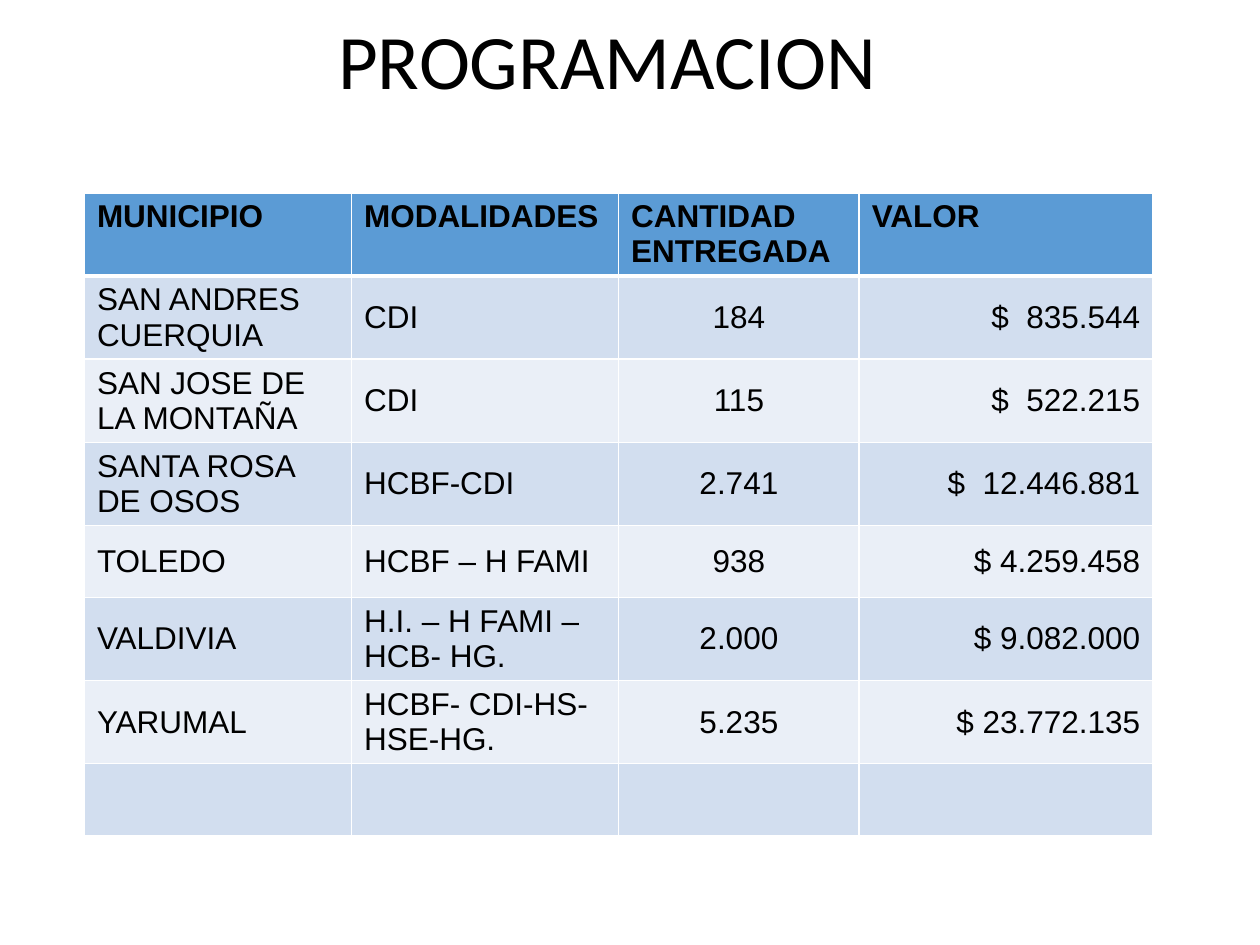
from lxml.etree import SubElement
from pptx import Presentation
from pptx.dml.color import RGBColor
from pptx.enum.text import MSO_ANCHOR, PP_ALIGN
from pptx.oxml.ns import qn
from pptx.util import Inches, Pt

BLACK = RGBColor(0x00, 0x00, 0x00)
WHITE = RGBColor(0xFF, 0xFF, 0xFF)
BLUE = RGBColor(0x5B, 0x9B, 0xD5)
BANDS = [RGBColor(0xEA, 0xEF, 0xF7), RGBColor(0xD2, 0xDE, 0xEF)]

WIDTHS = [2.12, 2.12, 1.91, 2.33]
ALIGNS = [PP_ALIGN.LEFT, PP_ALIGN.LEFT, PP_ALIGN.CENTER, PP_ALIGN.RIGHT]
ROW = 0.57
ROWS = [
    ("MUNICIPIO", "MODALIDADES", "CANTIDAD ENTREGADA", "VALOR"),
    ("SAN ANDRES CUERQUIA", "CDI", "184", "$  835.544"),
    ("SAN JOSE DE LA MONTAÑA", "CDI", "115", "$  522.215"),
    ("SANTA ROSA DE OSOS", "HCBF-CDI", "2.741", "$  12.446.881"),
    ("TOLEDO", "HCBF – H FAMI", "938", "$ 4.259.458"),
    ("VALDIVIA", "H.I. – H FAMI –HCB- HG.", "2.000", "$ 9.082.000"),
    ("YARUMAL", "HCBF- CDI-HS-HSE-HG.", "5.235", "$ 23.772.135"),
    ("", "", "", ""),
]


def write(frame, text, font="Arial", size=18, bold=False,
          align=PP_ALIGN.LEFT, spacing=None):
    para = frame.paragraphs[0]
    para.alignment = align
    para.line_spacing = spacing
    para.font.size = Pt(size)
    if not text:
        return
    run = para.add_run()
    run.text = text
    run.font.name = font
    run.font.size = Pt(size)
    run.font.bold = bold
    run.font.color.rgb = BLACK


def border(cell, top=1, bottom=1):
    """Draw white edges, with widths in points."""
    props = cell._tc.get_or_add_tcPr()
    for side, width in (("L", 1), ("R", 1), ("T", top), ("B", bottom)):
        line = SubElement(props, qn(f"a:ln{side}"), w=str(Pt(width)))
        fill = SubElement(line, qn("a:solidFill"))
        SubElement(fill, qn("a:srgbClr"), val=str(WHITE))


def add_title(slide, text):
    title = slide.shapes.title
    title.left, title.top = Inches(0.51), Inches(0.13)
    title.width, title.height = Inches(8.62), Inches(1.45)
    title.text_frame.vertical_anchor = MSO_ANCHOR.TOP
    write(title.text_frame, text, font="Calibri", size=44,
          align=PP_ALIGN.CENTER, spacing=0.9)


def add_grid(slide):
    frame = slide.shapes.add_table(
        len(ROWS), len(WIDTHS), Inches(0.67), Inches(1.53),
        Inches(sum(WIDTHS)), Inches(ROW * len(ROWS)))
    table = frame.table
    table.horz_banding = False
    for col, width in zip(table.columns, WIDTHS):
        col.width = Inches(width)
    for r, texts in enumerate(ROWS):
        table.rows[r].height = Inches(ROW)
        head = r == 0
        for c, text in enumerate(texts):
            cell = table.cell(r, c)
            border(cell, top=3 if r == 1 else 1, bottom=3 if head else 1)
            cell.fill.solid()
            cell.fill.fore_color.rgb = BLUE if head else BANDS[r % 2]
            cell.vertical_anchor = MSO_ANCHOR.TOP if head else MSO_ANCHOR.MIDDLE
            write(cell.text_frame, text, bold=head,
                  align=PP_ALIGN.LEFT if head else ALIGNS[c])


def main():
    deck = Presentation()
    deck.slide_width, deck.slide_height = Inches(10), Inches(7.5)
    slide = deck.slides.add_slide(deck.slide_layouts[5])
    add_title(slide, "PROGRAMACION")
    add_grid(slide)
    deck.save("out.pptx")


if __name__ == "__main__":
    main()
